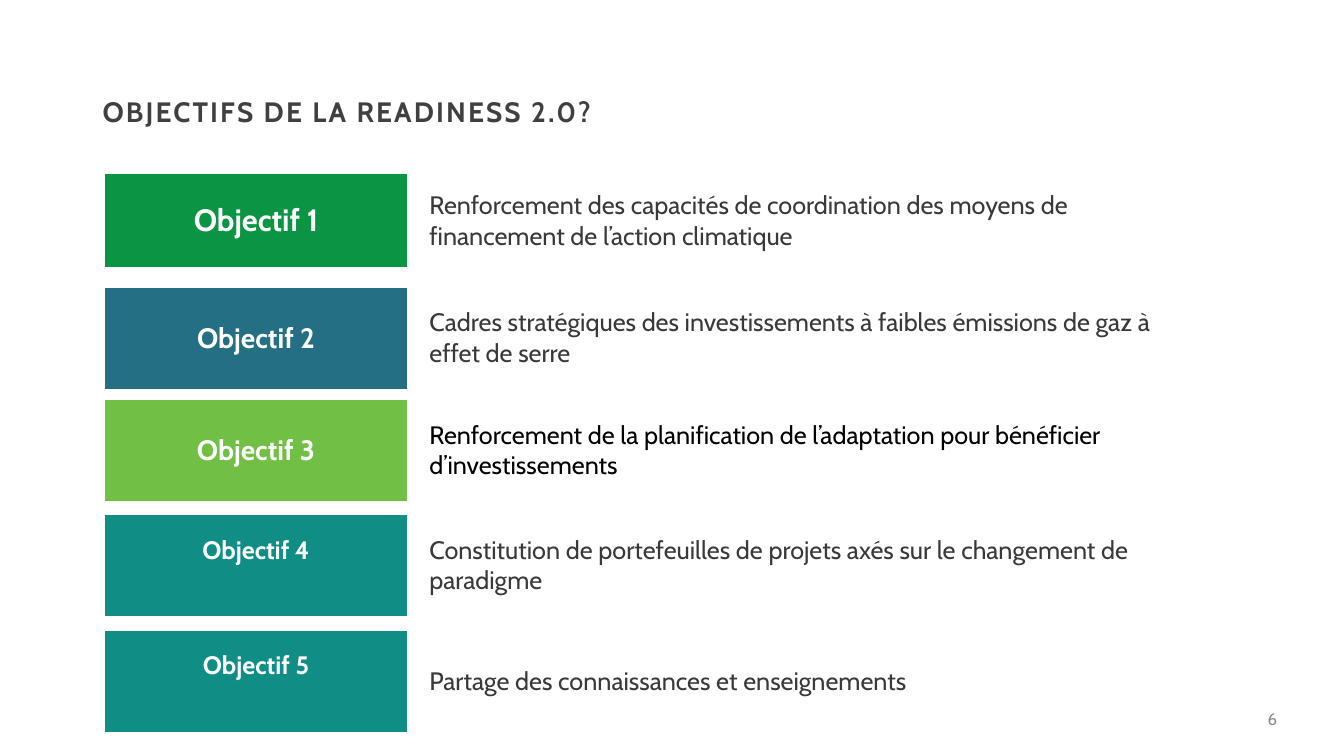
from pptx import Presentation
from pptx import util as u
from pptx.dml import color
from pptx.enum import text
from pptx.oxml import ns

FONT = "Cabin"
WHITE, DARK, BLACK = "FFFFFF", "3B3838", "000000"
NO_STYLE_NO_GRID = "{2D5ABB26-0587-4C30-8999-92F81FD0307C}"
TABLE_LEFT = 74.9
LABEL_WIDTH, GOAL_WIDTH = 216, 545.8

# Top, height, fill, label size, space under label, goal colour, goal
OBJECTIVES = [
    (124.6, 66.2, "0B9444", 22, 0, DARK,
     "Renforcement des capacités de coordination des moyens de financement de l’action climatique"),
    (205.6, 72, "256F84", 20, 0, DARK,
     "Cadres stratégiques des investissements à faibles émissions de gaz à effet de serre"),
    (285.8, 72, "71BF44", 20, 0, BLACK,
     "Renforcement de la planification de l’adaptation pour bénéficier d’investissements"),
    (368, 72, "108E86", 18, 22, DARK,
     "Constitution de portefeuilles de projets axés sur le changement de paradigme"),
    (450.6, 72, "108E86", 18, 22, DARK,
     "Partage des connaissances et enseignements"),
]


def rgb(value):
    return color.RGBColor.from_string(value)


def add_run(paragraph, words, size, colour, bold=False):
    run = paragraph.add_run()
    run.text = words
    run.font.name = FONT
    run.font.size = u.Pt(size)
    run.font.bold = bold
    run.font.color.rgb = rgb(colour)
    return run


def add_text_box(slide, left, top, width, height):
    """Add a wrapping, vertically centred box and return its first paragraph."""
    box = slide.shapes.add_textbox(u.Pt(left), u.Pt(top), u.Pt(width), u.Pt(height))
    frame = box.text_frame
    frame.word_wrap = True
    frame.vertical_anchor = text.MSO_ANCHOR.MIDDLE
    return frame.paragraphs[0]


def add_title(slide, words):
    paragraph = add_text_box(slide, 66.2, 28.8, 727.2, 104.4)
    paragraph.line_spacing = 0.9
    run = add_run(paragraph, words, 20, "404040", bold=True)
    run.font._element.set("spc", "150")


def add_page_number(slide, number):
    paragraph = add_text_box(slide, 703.4, 499, 216, 28.8)
    paragraph.alignment = text.PP_ALIGN.RIGHT
    add_run(paragraph, number, 12, "8C8C8C")


def add_objective(slide, number, top, height, fill, size, space_under, goal_colour, goal):
    """Add a one-row table: coloured label on the left, goal on the right."""
    frame = slide.shapes.add_table(1, 2, u.Pt(TABLE_LEFT), u.Pt(top),
                                   u.Pt(LABEL_WIDTH + GOAL_WIDTH), u.Pt(height))
    table = frame.table
    table.first_row = False
    table.horz_banding = False
    table._tbl.tblPr.find(ns.qn("a:tableStyleId")).text = NO_STYLE_NO_GRID
    table.columns[0].width = u.Pt(LABEL_WIDTH)
    table.columns[1].width = u.Pt(GOAL_WIDTH)

    label_cell, goal_cell = table.cell(0, 0), table.cell(0, 1)
    for cell in (label_cell, goal_cell):
        cell.vertical_anchor = text.MSO_ANCHOR.MIDDLE

    label_cell.fill.solid()
    label_cell.fill.fore_color.rgb = rgb(fill)
    label_cell.margin_bottom = u.Pt(3.6 + space_under)
    label = label_cell.text_frame.paragraphs[0]
    label.alignment = text.PP_ALIGN.CENTER
    add_run(label, f"Objectif {number}", size, WHITE, bold=True)

    goal_cell.fill.background()
    goal_cell.margin_left = u.Pt(15.8)
    add_run(goal_cell.text_frame.paragraphs[0], goal, 18, goal_colour)


def main():
    presentation = Presentation()
    presentation.slide_width = u.Pt(960)
    presentation.slide_height = u.Pt(540)
    slide = presentation.slides.add_slide(presentation.slide_layouts[6])
    add_page_number(slide, "6")
    add_title(slide, "OBJECTIFS DE LA READINESS 2.0?")
    for number, objective in enumerate(OBJECTIVES, start=1):
        add_objective(slide, number, *objective)
    presentation.save("out.pptx")


if __name__ == "__main__":
    main()
